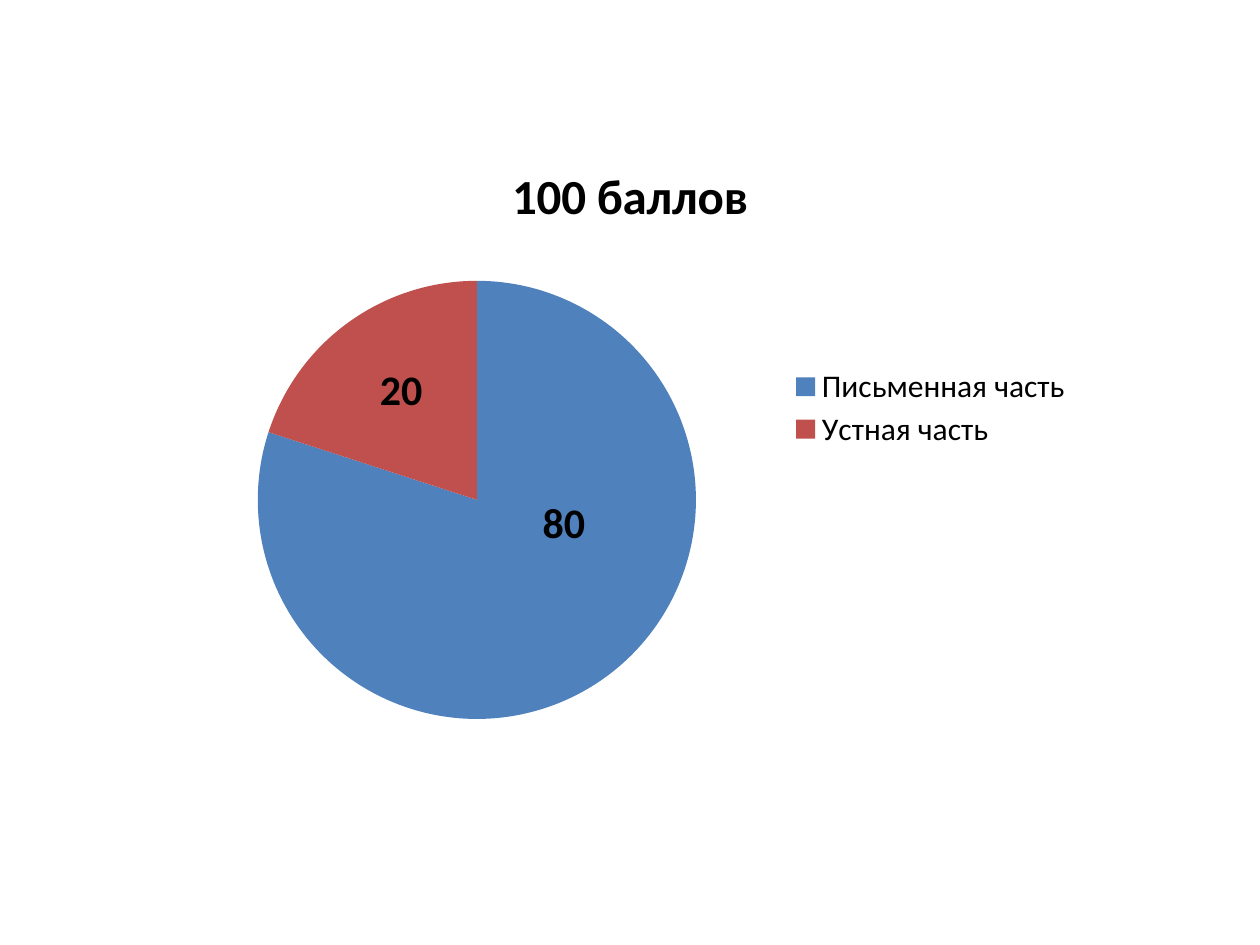
from lxml import etree
from pptx import Presentation
from pptx.chart.data import CategoryChartData
from pptx.dml.color import RGBColor
from pptx.enum.chart import XL_CHART_TYPE as ChartType
from pptx.enum.chart import XL_LABEL_POSITION as LabelPos
from pptx.enum.chart import XL_LEGEND_POSITION as LegendPos
from pptx.oxml.ns import qn
from pptx.util import Inches, Pt

BLACK = RGBColor(0x00, 0x00, 0x00)
BLUE = RGBColor(0x4F, 0x81, 0xBD)
RED = RGBColor(0xC0, 0x50, 0x4D)


class ScoreSlide:
    """Holds the text style and the current slide."""

    font = "Calibri"
    color = BLACK

    def __init__(self, prs):
        self.s = prs.slides.add_slide(prs.slide_layouts[6])

    def style(self, font, size, bold=False):
        font.name, font.size, font.bold = self.font, Pt(size), bold
        font.color.rgb = self.color

    def place(self, parent, index, **values):
        for old in parent.findall(qn("c:layout")):
            parent.remove(old)
        layout = etree.Element(qn("c:layout"))
        manual = etree.SubElement(layout, qn("c:manualLayout"))
        for tag, value in values.items():
            etree.SubElement(manual, qn(f"c:{tag}")).set("val", str(value))
        parent.insert(index, layout)

    def pie(self, title, slices, left, top, width, height):
        data = CategoryChartData()
        data.categories = [name for name, *_ in slices]
        data.add_series(title, [value for _, value, *_ in slices])
        chart = self.s.shapes.add_chart(
            ChartType.PIE, Inches(left), Inches(top),
            Inches(width), Inches(height), data).chart
        self.style(chart.font, 18)
        self.title(chart, title)
        self.legend(chart)
        plot = chart.plots[0]
        plot.vary_by_categories = True
        self.place(chart._chartSpace.chart.plotArea, 0,
                   layoutTarget="inner", xMode="edge", yMode="edge",
                   x=0.17, y=0.23, w=0.39, h=0.69)
        labels = plot.series[0].data_labels
        labels.show_value = True
        self.style(labels.font, 24, bold=True)
        for i, (_, _, color, dx, dy) in enumerate(slices):
            self.slice(plot.series[0].points[i], color, dx, dy)

    def title(self, chart, text):
        chart.has_title = True
        tf = chart.chart_title.text_frame
        tf.text = text
        self.style(tf.paragraphs[0].font, 28, bold=True)

    def legend(self, chart):
        chart.has_legend = True
        legend = chart.legend
        legend.position = LegendPos.RIGHT
        legend.include_in_layout = False
        self.style(legend.font, 18)
        self.place(legend._element, 1, xMode="edge", yMode="edge",
                   x=0.63, y=0.36, w=0.27, h=0.14)

    def slice(self, point, color, dx, dy):
        point.format.fill.solid()
        point.format.fill.fore_color.rgb = color
        label = point.data_label
        self.style(label.font, 24, bold=True)
        label.position = LabelPos.CENTER
        self.place(label._dLbl, 1, x=dx, y=dy)


def main():
    prs = Presentation()
    prs.slide_width, prs.slide_height = Inches(10), Inches(7.5)
    slide = ScoreSlide(prs)
    slide.pie("100 баллов", [
        ("Письменная часть", 80, BLUE, 0.02, -0.1),
        ("Устная часть", 20, RED, -0.01, -0.03),
    ], 0.5, 1.07, 9, 5.04)
    prs.save("out.pptx")


if __name__ == "__main__":
    main()
